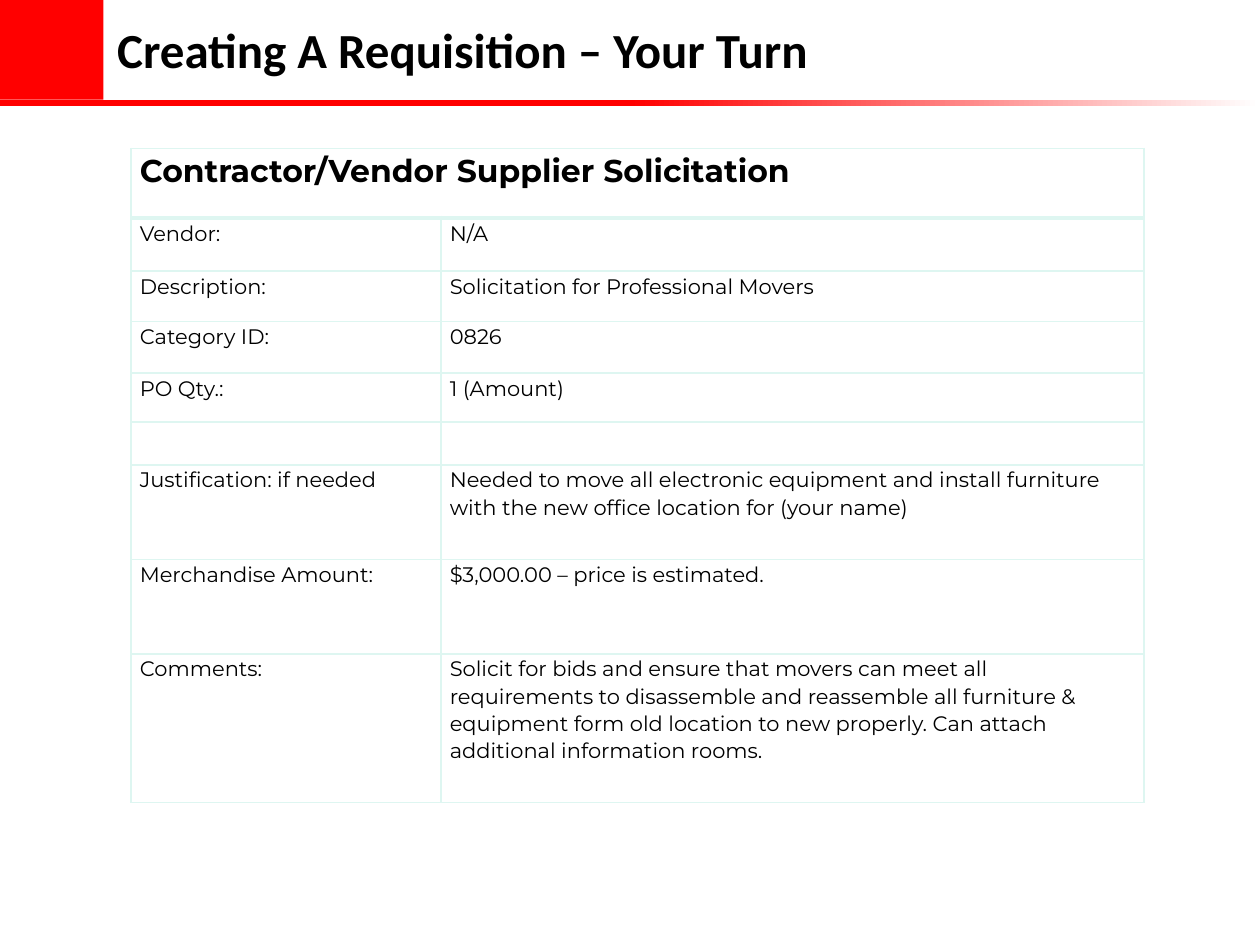
from pptx import Presentation
from pptx.dml.color import RGBColor
from pptx.enum.shapes import MSO_SHAPE as Shape
from pptx.enum.text import MSO_ANCHOR as Anchor, PP_ALIGN as Align
from pptx.oxml import parse_xml
from pptx.oxml.ns import nsdecls
from pptx.util import Inches, Pt

RED = RGBColor(0xFF, 0x00, 0x00)
WHITE = RGBColor(0xFF, 0xFF, 0xFF)
BLACK = RGBColor(0x00, 0x00, 0x00)
MINT = RGBColor(0xDE, 0xF6, 0xF1)

COLUMN_WIDTHS = [2.46, 5.58]
ROW_HEIGHTS = [0.55, 0.42, 0.4, 0.41, 0.39, 0.34, 0.75, 0.75, 1.18]
HEADING = "Contractor/Vendor Supplier Solicitation"
REQUISITION = [
    ("Vendor:", "N/A"),
    ("Description:", "Solicitation for Professional Movers"),
    ("Category ID:", "0826"),
    ("PO Qty.:", "1 (Amount)"),
    ("", ""),
    ("Justification: if needed",
     "Needed to move all electronic equipment and install furniture "
     "with the new office location for (your name)"),
    ("Merchandise Amount:", "$3,000.00 – price is estimated."),
    ("Comments:",
     "Solicit for bids and ensure that movers can meet all requirements to "
     "disassemble and reassemble all furniture & equipment form old location "
     "to new properly. Can attach additional information rooms."),
]


class SlideBuilder:
    title_font = "Calibri"
    table_font = "Montserrat"

    def __init__(self, page):
        self.page = page

    def style_run(self, paragraph, font_name, size, bold=False):
        for span in paragraph.runs:
            span.font.name = font_name
            span.font.size = Pt(size)
            span.font.bold = bold
            span.font.color.rgb = BLACK

    def title(self, text, left, top, width, height):
        box = self.page.shapes.title
        box.left, box.top = Inches(left), Inches(top)
        box.width, box.height = Inches(width), Inches(height)
        frame = box.text_frame
        frame.text = text
        frame.vertical_anchor = Anchor.MIDDLE
        frame.paragraphs[0].alignment = Align.LEFT
        self.style_run(frame.paragraphs[0], self.title_font, 28, bold=True)

    def bar(self, left, top, width, height, fades=False):
        box = self.page.shapes.add_shape(
            Shape.RECTANGLE, Inches(left), Inches(top), Inches(width), Inches(height))
        box.shadow.inherit = False
        box.line.fill.background()
        if fades:
            box.fill.gradient()
            box.fill.gradient_angle = 0
            stops = box.fill.gradient_stops
            for stop, position, color in zip(stops, (0.5, 1), (RED, WHITE)):
                stop.position = position
                stop.color.rgb = color
        else:
            box.fill.solid()
            box.fill.fore_color.rgb = RED

    def borders(self, cell, bottom=1):
        properties = cell._tc.get_or_add_tcPr()
        sides = {"lnL": 1, "lnR": 1, "lnT": 1, "lnB": bottom}
        for index, (side, width) in enumerate(sides.items()):
            properties.insert(index, parse_xml(
                f'<a:{side} {nsdecls("a")} w="{Pt(width)}"><a:solidFill>'
                f'<a:srgbClr val="{MINT}"/></a:solidFill></a:{side}>'))

    def cell(self, cell, text, size=12, bold=False, bottom=1):
        cell.fill.solid()
        cell.fill.fore_color.rgb = WHITE
        cell.margin_left = cell.margin_right = Inches(0.07)
        cell.margin_top, cell.margin_bottom = Inches(0.01), 0
        self.borders(cell, bottom)
        if text:
            cell.text_frame.text = text
            paragraph = cell.text_frame.paragraphs[0]
            paragraph.line_spacing = 1.06
            self.style_run(paragraph, self.table_font, size, bold)

    def table(self, left, top, heading, rows):
        table = self.page.shapes.add_table(
            len(ROW_HEIGHTS), len(COLUMN_WIDTHS), Inches(left), Inches(top),
            Inches(sum(COLUMN_WIDTHS)), Inches(sum(ROW_HEIGHTS))).table
        table.first_row = table.horz_banding = False
        for column, width in zip(table.columns, COLUMN_WIDTHS):
            column.width = Inches(width)
        for row, height in zip(table.rows, ROW_HEIGHTS):
            row.height = Inches(height)

        # Heading across both columns
        table.cell(0, 0).merge(table.cell(0, 1))
        for column, text in enumerate((heading, "")):
            self.cell(table.cell(0, column), text, size=18, bold=True, bottom=3)

        # Labels and values
        for row, texts in enumerate(rows, start=1):
            for column, text in enumerate(texts):
                self.cell(table.cell(row, column), text)


def main():
    deck = Presentation()
    deck.slide_width, deck.slide_height = Inches(10), Inches(7.5)
    builder = SlideBuilder(deck.slides.add_slide(deck.slide_layouts[5]))

    # Header band
    builder.bar(0, 0.79, 10, 0.05, fades=True)
    builder.bar(0, 0, 0.82, 0.79)
    builder.title("Creating A Requisition – Your Turn", 0.83, 0.03, 7.25, 0.72)

    # Requisition details
    builder.table(1.04, 1.18, HEADING, REQUISITION)
    deck.save("out.pptx")


if __name__ == "__main__":
    main()
